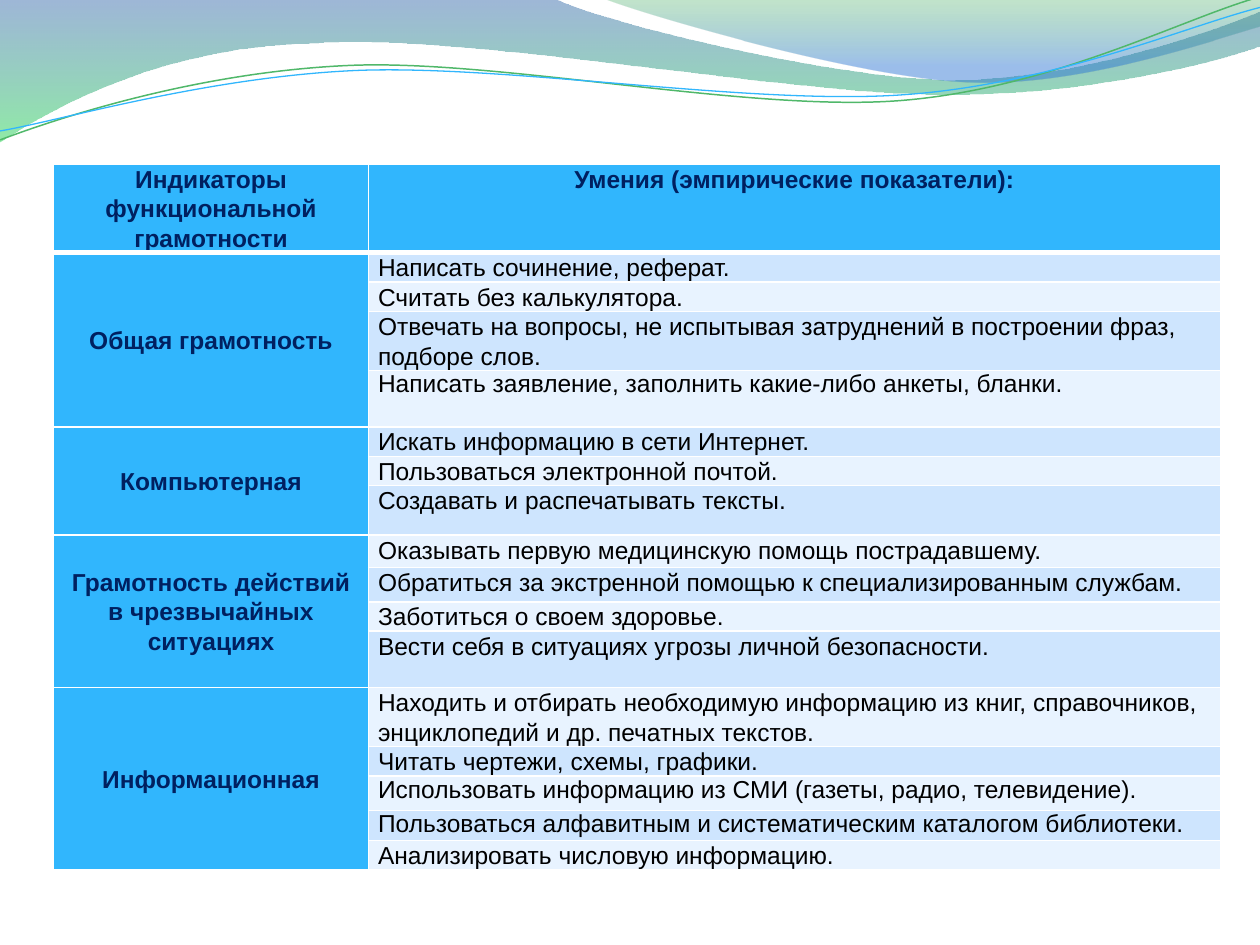
from math import cos, radians, sin

from lxml import etree
from pptx import Presentation
from pptx.dml.color import RGBColor
from pptx.enum.text import MSO_ANCHOR as Anchor, PP_ALIGN as Align
from pptx.oxml.ns import qn
from pptx.util import Cm, Pt

SLIDE_W, SLIDE_H = 25.4, 19.05
BLUE, NAVY, WHITE, BLACK = "31B6FD", "002060", "FFFFFF", "000000"
BANDS = ["E8F3FF", "CEE5FE"]  # even rows, odd rows

# Wave outlines: a start point, then line points (x, y) or curves (x1, y1, x2, y2, x, y)
BACK_WAVE = [
    (0, 0), (11.18, -0.03),
    (12.09, 0.43, 16.87, 1.6, 19.25, 1.6), (21.67, 1.6, 24.33, 0.66, 25.4, 0.23),
    (25.43, 0.91),
    (24.97, 1.12, 22.1, 1.93, 18.95, 1.9), (15.8, 1.9, 9.7, 0.71, 6.53, 0.86),
    (3.28, 0.91, 1.17, 2.11, -0.03, 2.87), (0, 0),
]
FRONT_WAVE = [
    (12.17, -0.03),
    (12.93, 0.28, 17.32, 1.57, 19.53, 1.65), (21.74, 1.75, 24.41, 0.81, 25.4, 0.53),
    (25.4, 0), (12.17, -0.03),
]
GREEN_LINE = [
    (0, 2.82),
    (1.22, 2.36, 4.01, 1.45, 7.04, 1.32), (10.03, 1.19, 15.06, 2.26, 18.11, 2.03),
    (21.16, 1.8, 23.83, 0.38, 25.35, -0.05),
]
BLUE_LINE = [
    (0, 2.64),
    (1.19, 2.44, 4.17, 1.55, 7.19, 1.42), (10.24, 1.3, 15.16, 2.13, 18.21, 1.91),
    (21.23, 1.7, 23.9, 0.53, 25.4, 0.15),
]
LINE_TILT = -2.7  # degrees
LINE_CENTER = (12.68, 1.48)

# Paragraph spacing: (line spacing, points after)
LOOSE, PLAIN, LAST = (1.07, 7.5), (None, None), (1.07, None)
HEADINGS = ["Индикаторы функциональной грамотности", "Умения (эмпирические показатели):"]
HEAD_H = 1.65
# Each group: name, then skills as (text, row height, spacing)
GROUPS = [
    ("Общая грамотность", [
        ("Написать сочинение, реферат.", 0.56, LOOSE),
        ("Считать без калькулятора.", 0.56, LOOSE),
        ("Отвечать на вопросы, не испытывая затруднений в построении фраз, "
         "подборе слов.", 1.09, LOOSE),
        ("Написать заявление, заполнить какие-либо анкеты, бланки.", 1.14, PLAIN),
    ]),
    ("Компьютерная", [
        ("Искать информацию в сети Интернет.", 0.56, LOOSE),
        ("Пользоваться электронной почтой.", 0.56, LOOSE),
        ("Создавать и распечатывать тексты.", 0.99, LOOSE),
    ]),
    ("Грамотность действий в чрезвычайных ситуациях", [
        ("Оказывать первую медицинскую помощь пострадавшему.", 0.66, LOOSE),
        ("Обратиться за экстренной помощью к специализированным службам.", 0.69, LOOSE),
        ("Заботиться о своем здоровье.", 0.56, LOOSE),
        ("Вести себя в ситуациях угрозы личной безопасности.", 1.14, LOOSE),
    ]),
    ("Информационная", [
        ("Находить и отбирать необходимую информацию из книг, справочников, "
         "энциклопедий и др. печатных текстов.", 1.09, LOOSE),
        ("Читать чертежи, схемы, графики.", 0.56, LOOSE),
        ("Использовать информацию из СМИ (газеты, радио, телевидение).", 0.69, PLAIN),
        ("Пользоваться алфавитным и систематическим каталогом библиотеки.", 0.61, PLAIN),
        ("Анализировать числовую информацию.", 0.56, LAST),
    ]),
]


def rgb(color):
    return RGBColor.from_string(color)


def add_outline(s, outline, left, top, closed, tilt=0):
    """Draw an outline; a tilted one is laid flat first, then rotated as a shape."""
    cx, cy = LINE_CENTER
    c, d = cos(radians(tilt)), sin(radians(tilt))

    def place(x, y):
        if tilt:
            x, y = cx + (x - cx) * c + (y - cy) * d, cy - (x - cx) * d + (y - cy) * c
        return Cm(left + x), Cm(top + y)

    segments = [[place(*pair) for pair in zip(seg[::2], seg[1::2])] for seg in outline]
    anchors = [seg[-1] for seg in segments]
    builder = s.shapes.build_freeform(*anchors[0])
    builder.add_line_segments(anchors[1:], close=closed)
    sp = builder.convert_to_shape()
    sp.shadow.inherit = False

    # Bend the straight segments that have control points
    lines = list(sp._element.iter(qn("a:lnTo")))
    for line, seg in zip(lines, segments[1:]):
        if len(seg) == 3:
            curve = etree.Element(qn("a:cubicBezTo"))
            for x, y in seg:
                etree.SubElement(curve, qn("a:pt"), x=str(x - sp.left), y=str(y - sp.top))
            line.getparent().replace(line, curve)
    sp.rotation = tilt
    return sp


def add_waves(s, left, top):
    # Filled waves: stops are (position, colour, opacity in percent)
    for outline, stops in [
        (BACK_WAVE, [(0, "2960A7", 45), (1, "35DA5E", 55)]),
        (FRONT_WAVE, [(0, "36A752", 30), (0.8, "2472D3", 45)]),
    ]:
        sp = add_outline(s, outline, left, top, True)
        sp.line.fill.background()
        sp.fill.gradient()
        sp.fill.gradient_angle = 270
        for stop, (position, color, _) in zip(sp.fill.gradient_stops, stops):
            stop.position = position
            stop.color.rgb = rgb(color)
        for clr, (_, _, opacity) in zip(sp._element.spPr.iter(qn("a:srgbClr")), stops):
            etree.SubElement(clr, qn("a:alpha"), val=str(opacity * 1000))
    # Thin lines
    for outline, color, width in [(GREEN_LINE, "50B86A", 0.85), (BLUE_LINE, BLUE, 0.75)]:
        sp = add_outline(s, outline, left, top, False, LINE_TILT)
        sp.fill.background()
        sp.line.color.rgb = rgb(color)
        sp.line.width = Pt(width)


def style_cell(cell, fill, top=1, bottom=1):
    tcPr = cell._tc.get_or_add_tcPr()
    for side, width in zip("LRTB", (1, 1, top, bottom)):
        ln = etree.SubElement(tcPr, qn(f"a:ln{side}"), w=str(Pt(width)))
        line_fill = etree.SubElement(ln, qn("a:solidFill"))
        etree.SubElement(line_fill, qn("a:srgbClr"), val=WHITE)
    cell.fill.solid()
    cell.fill.fore_color.rgb = rgb(fill)
    cell.margin_left = cell.margin_right = Cm(0.19)
    cell.margin_top = cell.margin_bottom = 0


def write_cell(cell, text, spacing=LOOSE, heading=True):
    p = cell.text_frame.paragraphs[0]
    p.alignment = Align.CENTER if heading else Align.LEFT
    line, after = spacing
    if line:
        p.line_spacing = line
    if after:
        p.space_after = Pt(after)
    r = p.add_run()
    r.text = text
    r.font.name, r.font.size, r.font.bold = "Arial", Pt(14), heading
    r.font.color.rgb = rgb(NAVY if heading else BLACK)


def add_skills_table(s, left, top, width, name_w):
    heights = [HEAD_H] + [h for _, skills in GROUPS for _, h, _ in skills]
    frame = s.shapes.add_table(len(heights), 2, Cm(left), Cm(top), Cm(width), Cm(sum(heights)))
    table = frame.table
    table.first_row = table.horz_banding = False
    for column, w in zip(table.columns, (name_w, width - name_w)):
        column.width = Cm(w)
    for row, h in zip(table.rows, heights):
        row.height = Cm(h)

    # Header row, with a thick rule below
    for col, text in enumerate(HEADINGS):
        style_cell(table.cell(0, col), BLUE, bottom=3)
        write_cell(table.cell(0, col), text)

    # Groups: a merged name beside its banded skills
    row = 1
    for name, skills in GROUPS:
        first = table.cell(row, 0)
        for i, (text, _, spacing) in enumerate(skills, row):
            rule = 3 if i == 1 else 1
            style_cell(table.cell(i, 0), BLUE, top=rule)
            style_cell(table.cell(i, 1), BANDS[i % 2], top=rule)
            write_cell(table.cell(i, 1), text, spacing, heading=False)
        row += len(skills)
        first.merge(table.cell(row - 1, 0))
        first.vertical_anchor = Anchor.MIDDLE
        write_cell(first, name)


def main():
    prs = Presentation()
    prs.slide_width, prs.slide_height = Cm(SLIDE_W), Cm(SLIDE_H)
    s = prs.slides.add_slide(prs.slide_layouts[6])
    s.background.fill.solid()
    s.background.fill.fore_color.rgb = rgb(WHITE)
    add_waves(s, 0, 0)
    add_skills_table(s, 1.08, 3.31, 23.52, 6.35)
    prs.save("out.pptx")


if __name__ == "__main__":
    main()
